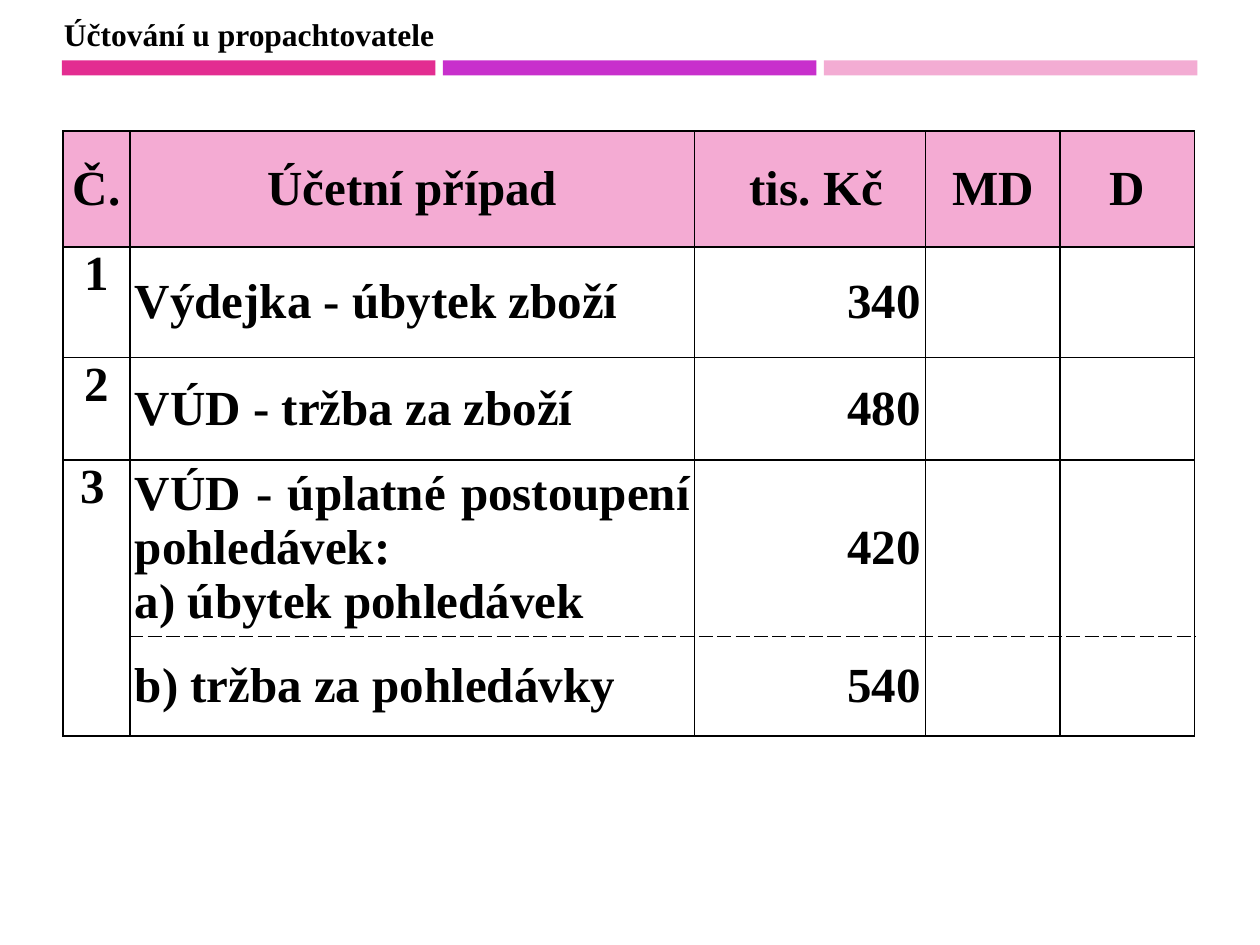
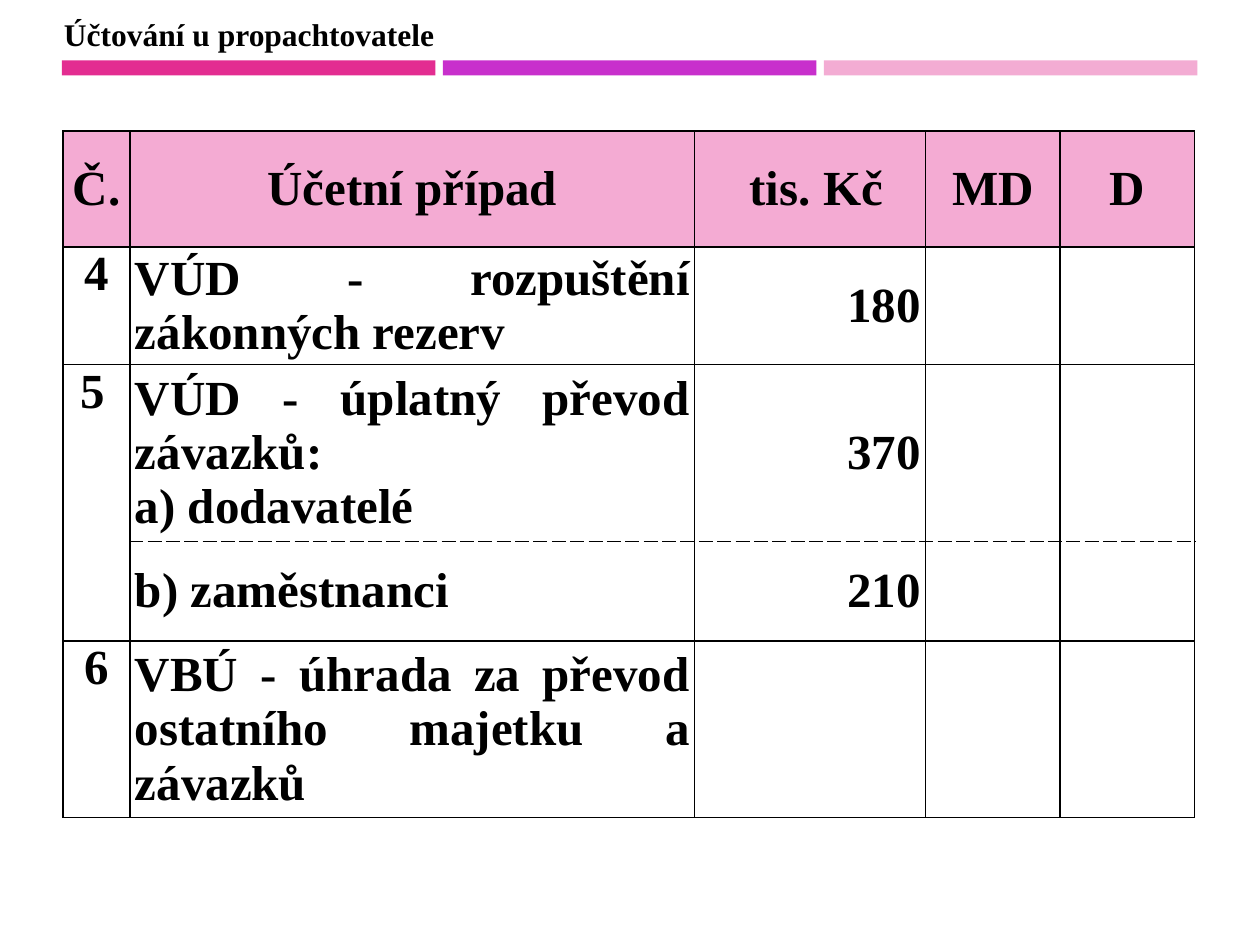
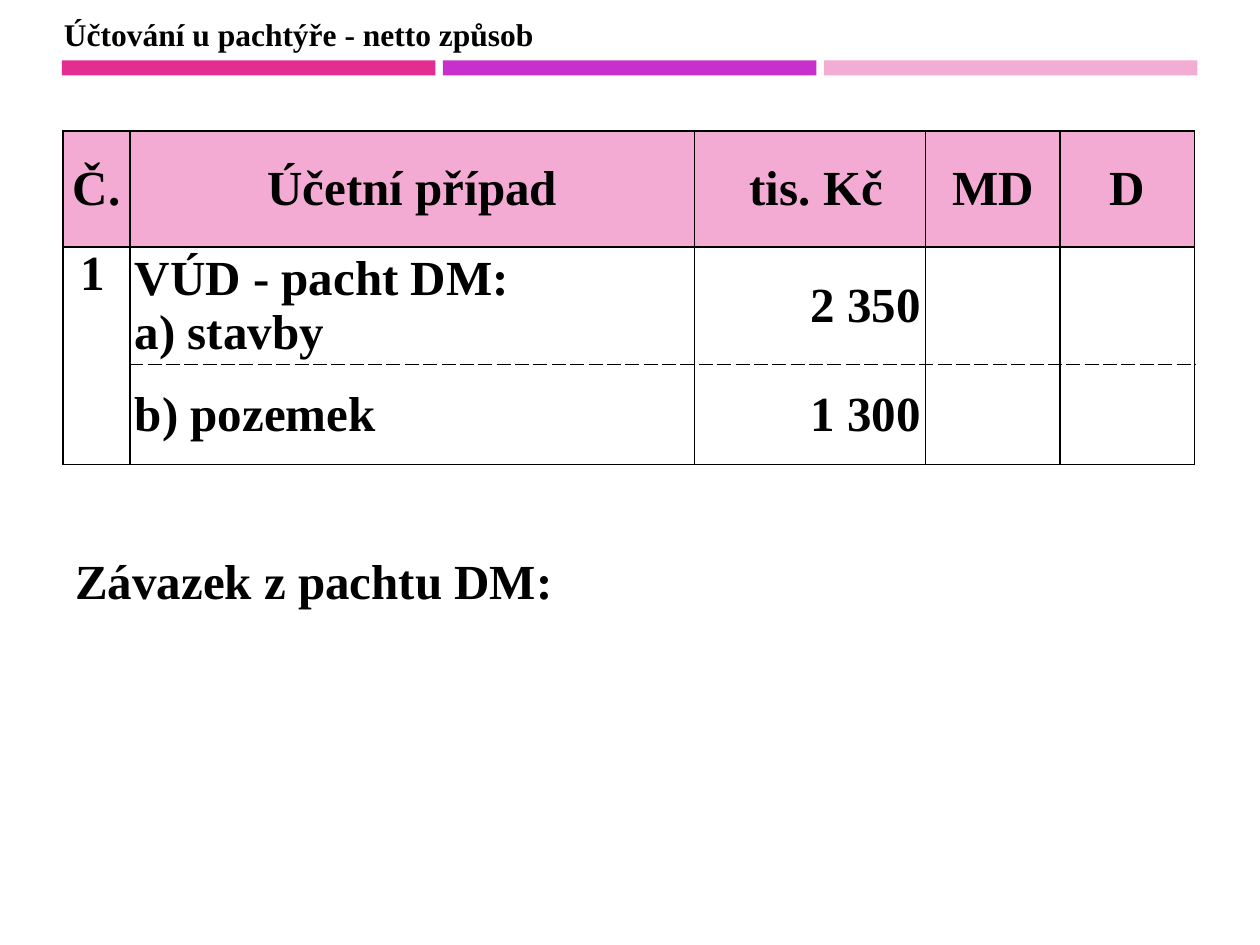
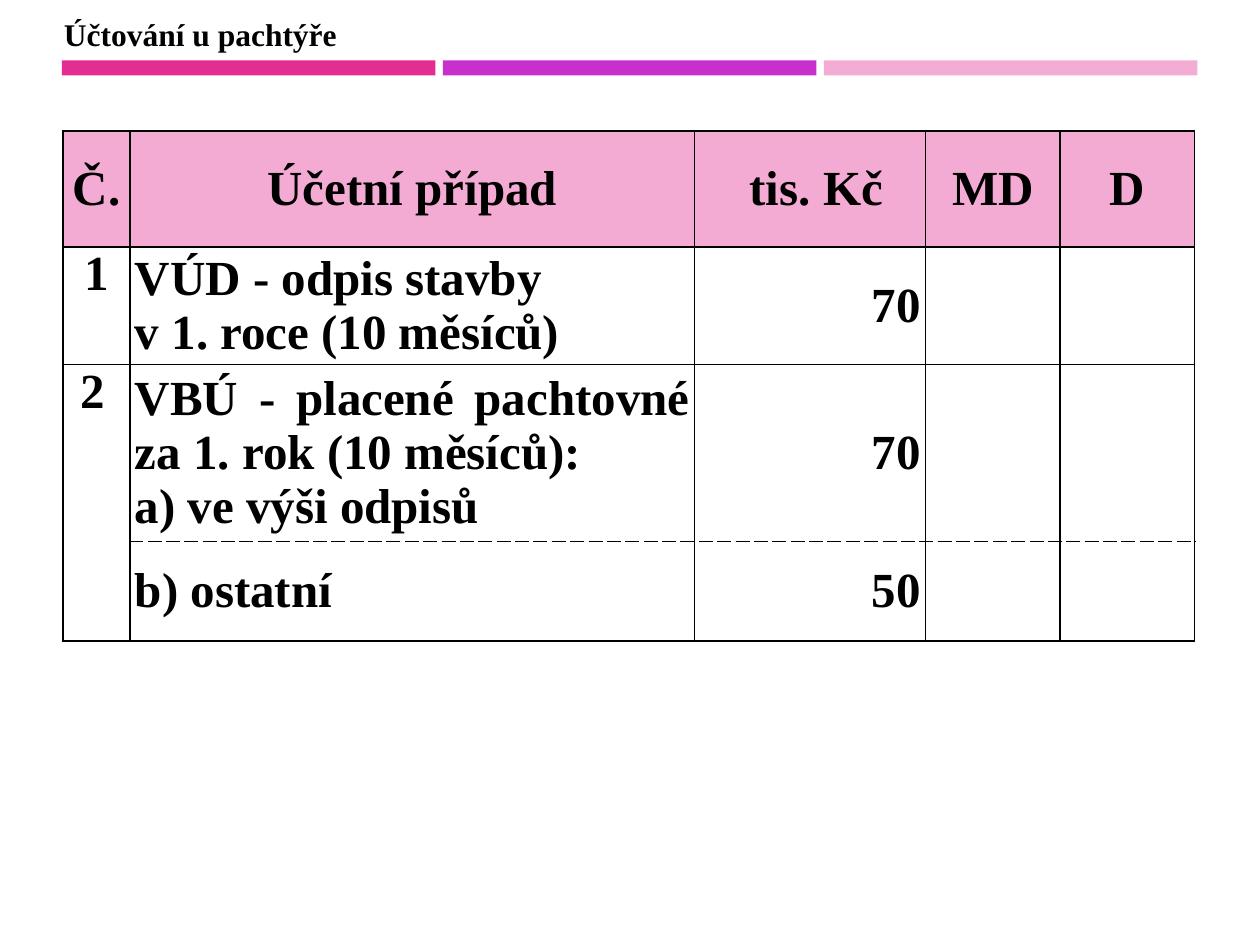
"""Build four slides of lease accounting exercises with posting tables."""
from lxml.etree import SubElement
from pptx import Presentation
from pptx.dml.color import RGBColor
from pptx.enum.shapes import MSO_SHAPE
from pptx.enum.text import MSO_ANCHOR, MSO_AUTO_SIZE, PP_ALIGN
from pptx.oxml.ns import qn
from pptx.util import Cm, Pt

FONT = "Times New Roman"
BLACK = "000000"
HEADER_FILL = "F4ABD3"
BAND_COLORS = ["E32D91", "C830CC", "F3ACD3"]
BAND_LEFT, BAND_TOP, BAND_WIDTH, BAND_HEIGHT, BAND_STEP = 1.25, 1.22, 7.53, 0.3, 7.68

TABLE_LEFT, TABLE_TOP = 1.27, 2.64
COLUMN_WIDTHS = [1.35, 11.38, 4.66, 2.71, 2.71]
HEADER_HEIGHT = 2.34
SINGLE, SHORT, DOUBLE, TRIPLE, PART = 2.23, 2.06, 2.36, 3.56, 2.01
HEADERS = ["Č.", "Účetní případ", " tis. Kč", "MD", "D"]

SLIDES = [
    {"title": "Účtování u propachtovatele", "title_width": 8.05, "cases": [
        ("1", [("Výdejka - úbytek zboží", "340", SINGLE)]),
        ("2", [("VÚD - tržba za zboží", "480", SHORT)]),
        ("3", [("VÚD - úplatné postoupení pohledávek:\na) úbytek pohledávek", "420", TRIPLE),
               ("b) tržba za pohledávky", "540", PART)]),
    ]},
    {"title": "Účtování u propachtovatele", "title_width": 8.05, "cases": [
        ("4", [("VÚD - rozpuštění zákonných rezerv", "180", DOUBLE)]),
        ("5", [("VÚD - úplatný převod závazků:\na) dodavatelé", "370", TRIPLE),
               ("b) zaměstnanci", "210", PART)]),
        ("6", [("VBÚ - úhrada za převod ostatního majetku a závazků", "", TRIPLE)]),
    ]},
    {"title": "Účtování u pachtýře - netto způsob", "title_width": 10.12, "cases": [
        ("1", [("VÚD - pacht DM:\na) stavby", "2 350", DOUBLE),
               ("b) pozemek", "1 300", PART)]),
    ], "question": "Závazek z pachtu DM:"},
    {"title": "Účtování u pachtýře", "title_width": 6.1, "cases": [
        ("1", [("VÚD - odpis stavby\nv 1. roce (10 měsíců)", "70", DOUBLE)]),
        ("2", [("VBÚ - placené pachtovné za 1. rok (10 měsíců):\na) ve výši odpisů", "70", TRIPLE),
               ("b) ostatní", "50", PART)]),
    ]},
]


def rgb(value):
    return RGBColor.from_string(value)


def write(frame, text, size, align=PP_ALIGN.LEFT):
    frame.text = text
    for paragraph in frame.paragraphs:
        paragraph.alignment = align
        for run in paragraph.runs:
            run.font.name = FONT
            run.font.size = Pt(size)
            run.font.bold = True
            run.font.color.rgb = rgb(BLACK)


def add_label(slide, text, left, top, width, height, size):
    label = slide.shapes.add_textbox(Cm(left), Cm(top), Cm(width), Cm(height))
    label.text_frame.word_wrap = False
    label.text_frame.auto_size = MSO_AUTO_SIZE.SHAPE_TO_FIT_TEXT
    write(label.text_frame, text, size)


def add_bands(slide):
    for index, color in enumerate(BAND_COLORS):
        band = slide.shapes.add_shape(
            MSO_SHAPE.RECTANGLE, Cm(BAND_LEFT + index * BAND_STEP), Cm(BAND_TOP),
            Cm(BAND_WIDTH), Cm(BAND_HEIGHT))
        band.shadow.inherit = False
        band.fill.solid()
        band.fill.fore_color.rgb = rgb(color)
        band.line.fill.background()


def style_cell(cell, fill=None, dashed=()):
    properties = cell._tc.get_or_add_tcPr()
    for side in ("L", "R", "T", "B"):
        border = SubElement(properties, qn(f"a:ln{side}"), w=str(Pt(1)))
        SubElement(SubElement(border, qn("a:solidFill")), qn("a:srgbClr"), val=BLACK)
        SubElement(border, qn("a:prstDash"), val="dash" if side in dashed else "solid")
    if fill:
        cell.fill.solid()
        cell.fill.fore_color.rgb = rgb(fill)
    else:
        cell.fill.background()
    cell.margin_left = cell.margin_right = Cm(0.1)
    cell.margin_top = cell.margin_bottom = 0
    cell.vertical_anchor = MSO_ANCHOR.MIDDLE


def add_number(table, row, number, part_count):
    cell = table.cell(row, 0)
    cell.vertical_anchor = MSO_ANCHOR.TOP
    if part_count == 1:
        write(cell.text_frame, number, 28, PP_ALIGN.CENTER)
    else:
        cell.merge(table.cell(row + part_count - 1, 0))
        cell.margin_left = Cm(0.35)
        write(cell.text_frame, number, 28)


def add_cases(slide, cases):
    heights = [HEADER_HEIGHT] + [height for _, parts in cases for _, _, height in parts]
    table = slide.shapes.add_table(
        len(heights), len(HEADERS), Cm(TABLE_LEFT), Cm(TABLE_TOP),
        Cm(sum(COLUMN_WIDTHS)), Cm(sum(heights))).table
    table.first_row = table.horz_banding = False
    for column, width in zip(table.columns, COLUMN_WIDTHS):
        column.width = Cm(width)
    for row, height in zip(table.rows, heights):
        row.height = Cm(height)
    for column, header in enumerate(HEADERS):
        style_cell(table.cell(0, column), HEADER_FILL)
        write(table.cell(0, column).text_frame, header, 28, PP_ALIGN.CENTER)

    row = 1
    for number, parts in cases:
        first_row = row
        for index, (description, amount, _) in enumerate(parts):
            dashed = ("T" if index else "") + ("B" if index < len(parts) - 1 else "")
            for column in range(len(HEADERS)):
                style_cell(table.cell(row, column), dashed=dashed if column else "")
            write(table.cell(row, 1).text_frame, description, 28, PP_ALIGN.JUSTIFY)
            write(table.cell(row, 2).text_frame, amount, 28, PP_ALIGN.RIGHT)
            row += 1
        add_number(table, first_row, number, len(parts))


def main():
    deck = Presentation()
    deck.slide_width, deck.slide_height = Cm(25.4), Cm(19.05)
    for content in SLIDES:
        slide = deck.slides.add_slide(deck.slide_layouts[6])
        add_bands(slide)
        add_label(slide, content["title"], 1.04, 0.18, content["title_width"], 1.02, 18)
        add_cases(slide, content["cases"])
        if "question" in content:
            add_label(slide, content["question"], 1.27, 10.97, 10.24, 1.45, 28)
    deck.save("out.pptx")


if __name__ == "__main__":
    main()
